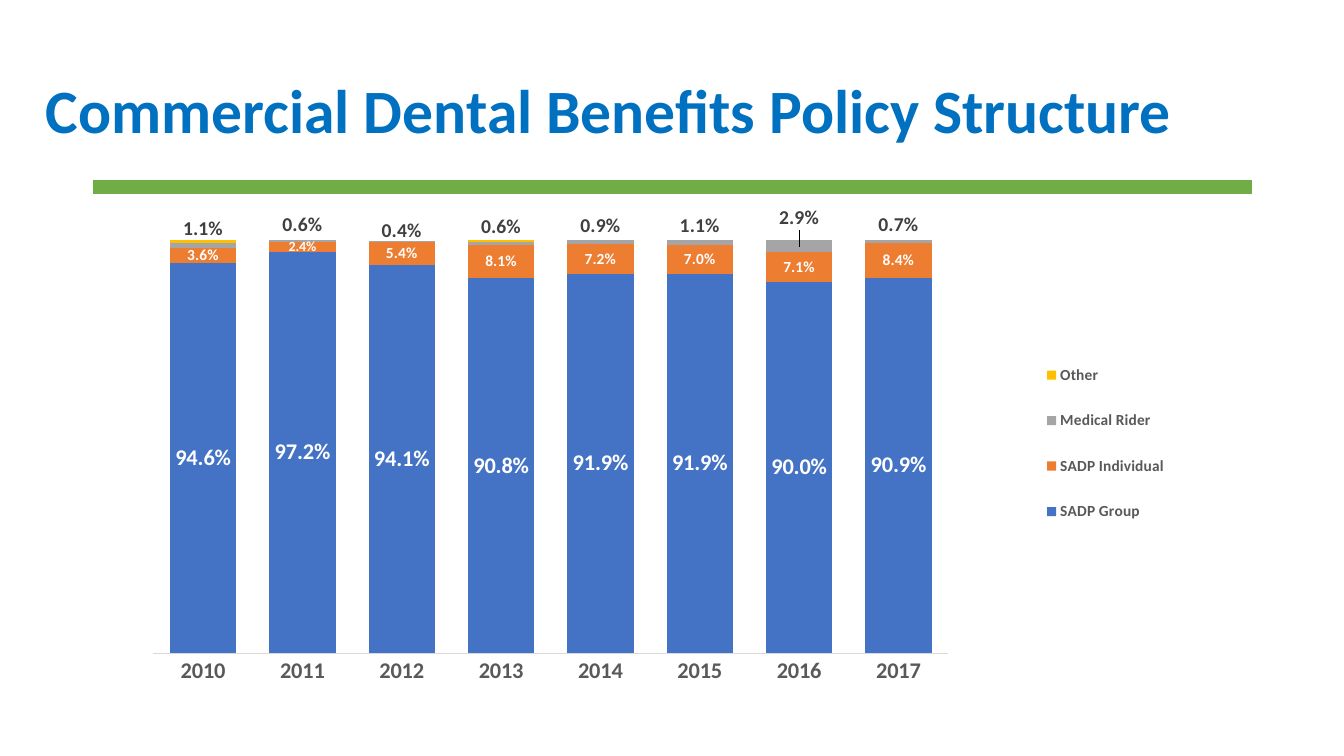
from pptx import Presentation
from pptx.chart.data import CategoryChartData
from pptx.dml.color import RGBColor
from pptx.enum.chart import XL_CHART_TYPE, XL_LEGEND_POSITION, XL_TICK_MARK
from pptx.enum.shapes import MSO_CONNECTOR
from pptx.enum.text import MSO_ANCHOR
from pptx.oxml import parse_xml
from pptx.oxml.ns import nsdecls, qn
from pptx.util import Cm, Pt

YEARS = [str(year) for year in range(2010, 2018)]
SERIES = [
    ("SADP Group", "4472C4",
     [0.946, 0.972, 0.941, 0.908, 0.919, 0.919, 0.9, 0.909]),
    ("SADP Individual", "ED7D31",
     [0.036, 0.024, 0.054, 0.081, 0.072, 0.07, 0.071, 0.084]),
    ("Medical Rider", "A5A5A5",
     [0.011, 0.006, 0.004, 0.006, 0.009, 0.011, 0.029, 0.007]),
    ("Other", "FFC000", [0.01, 0, 0, 0.01, 0, 0, 0, 0]),
]
LABELS = [(16, "FFFFFF"), (11, "FFFFFF"), (14, "404040")]
RISES = [0.03, 0.03, 0.02, 0.03, 0.03, 0.03, 0.05, 0.03]


def paint(code):
    return RGBColor.from_string(code)


def style(font, size, code, bold=True):
    font.name = "Calibri"
    font.size = Pt(size)
    font.bold = bold
    font.color.rgb = paint(code)


def layout(**parts):
    tags = "".join(f'<c:{tag} val="{val}"/>' for tag, val in parts.items())
    return parse_xml(f'<c:layout {nsdecls("c")}><c:manualLayout>{tags}'
                     '</c:manualLayout></c:layout>')


def place(node, after, **parts):
    for old in node.findall(qn("c:layout")):
        node.remove(old)
    new = layout(**parts)
    if after is None:
        node.insert(0, new)
    else:
        node.find(qn(after)).addnext(new)


def add_title(slide, text):
    box = slide.shapes.add_textbox(Cm(0.91), Cm(1.02), Cm(30.63), Cm(3.68))
    frame = box.text_frame
    frame.word_wrap = True
    frame.vertical_anchor = MSO_ANCHOR.MIDDLE
    frame.text = text
    line = frame.paragraphs[0]
    line.line_spacing = 0.9
    style(line.runs[0].font, 44, "0070C0")


def add_rule(slide):
    rule = slide.shapes.add_connector(
        MSO_CONNECTOR.STRAIGHT, Cm(2.34), Cm(4.7), Cm(31.55), Cm(4.7))
    rule.line.color.rgb = paint("70AD47")
    rule.line.width = Pt(10)
    rule._element.spPr.append(parse_xml(f'<a:effectLst {nsdecls("a")}/>'))


def set_axes(chart):
    years = chart.category_axis
    years.major_tick_mark = XL_TICK_MARK.NONE
    years.format.line.color.rgb = paint("D9D9D9")
    years.format.line.width = Pt(0.75)
    style(years.tick_labels.font, 16, "595959")
    share = chart.value_axis
    share.minimum_scale = 0
    share.maximum_scale = 1
    share.has_major_gridlines = False
    share.visible = False


def set_legend(chart):
    chart.has_legend = True
    legend = chart.legend
    legend.position = XL_LEGEND_POSITION.RIGHT
    legend.include_in_layout = False
    style(legend.font, 11, "595959")
    place(legend._element, "c:legendPos", xMode="edge", yMode="edge",
          x=0.84, y=0.34, w=0.16, h=0.37)


def set_labels(series, size, code):
    labels = series.data_labels
    labels.show_value = True
    labels.number_format = "0.0%"
    labels.number_format_is_linked = False
    style(labels.font, size, code)


def lift_labels(series, size, code):
    for index, rise in enumerate(RISES):
        style(series.points[index].data_label.font, size, code)
    for label, rise in zip(series._element.iter(qn("c:dLbl")), RISES):
        place(label, "c:idx", x=0, y=-rise)


def add_chart(slide):
    data = CategoryChartData(number_format="0.0%")
    data.categories = YEARS
    for name, code, shares in SERIES:
        data.add_series(name, shares)
    chart = slide.shapes.add_chart(
        XL_CHART_TYPE.COLUMN_STACKED, Cm(2.34), Cm(3.71),
        Cm(27.74), Cm(14.22), data).chart
    chart.has_title = False
    style(chart.font, 10, "000000", False)
    plot = chart.plots[0]
    plot.gap_width = 50
    plot.overlap = 100
    plot.vary_by_categories = False
    for series, (name, code, shares) in zip(plot.series, SERIES):
        series.format.fill.solid()
        series.format.fill.fore_color.rgb = paint(code)
    for series, (size, code) in zip(plot.series, LABELS):
        set_labels(series, size, code)
    group, single, rider, other = plot.series
    style(single.points[1].data_label.font, 10, "FFFFFF")
    lift_labels(rider, *LABELS[2])
    set_axes(chart)
    set_legend(chart)
    area = chart._chartSpace.chart.plotArea
    place(area, None, layoutTarget="inner", xMode="edge", yMode="edge",
          x=0.055, y=0.165, w=0.722, h=0.732)


def main():
    deck = Presentation()
    deck.slide_width = Cm(33.87)
    deck.slide_height = Cm(19.05)
    slide = deck.slides.add_slide(deck.slide_layouts[6])
    add_rule(slide)
    add_title(slide, "Commercial Dental Benefits Policy Structure")
    add_chart(slide)
    deck.save("out.pptx")


if __name__ == "__main__":
    main()
